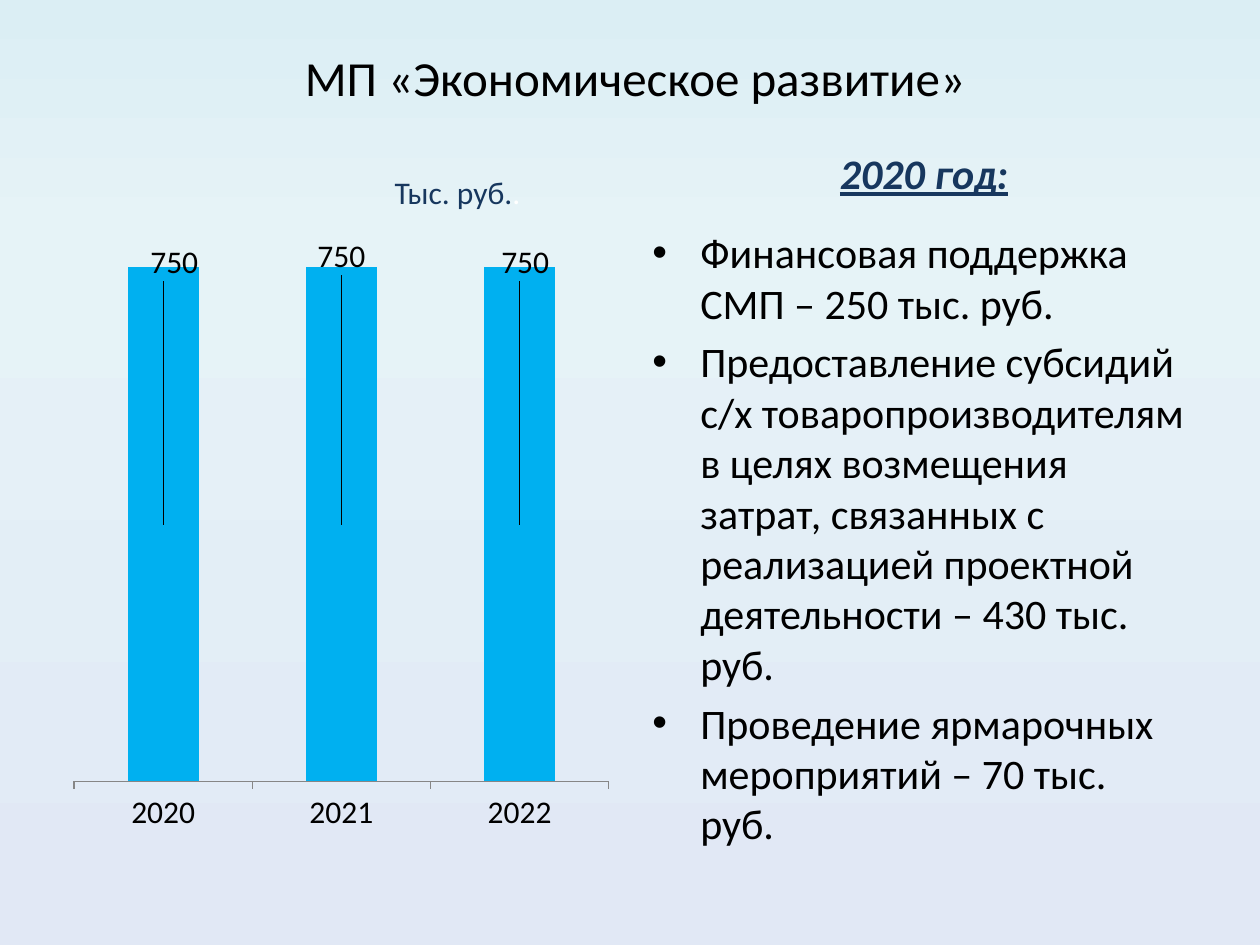
from copy import deepcopy
from lxml.etree import SubElement
from pptx import Presentation
from pptx.chart.data import CategoryChartData
from pptx.dml.color import RGBColor
from pptx.enum.chart import XL_CHART_TYPE, XL_TICK_LABEL_POSITION, XL_TICK_MARK
from pptx.enum.text import MSO_ANCHOR, MSO_AUTO_SIZE, PP_ALIGN
from pptx.oxml.ns import qn
from pptx.util import Inches, Pt

COLORS = {
    "black": "000000", "navy": "17375E", "white": "FFFFFF", "bar": "00B0F0",
    "axis": "868686", "top": "DBEEF4", "mid": "E6F3F7", "base": "E1E8F5",
}


def color(name):
    return RGBColor.from_string(COLORS[name])


def style(font, size, name):
    font.name = "Calibri"
    font.size = Pt(size)
    font.color.rgb = color(name)


prs = Presentation()
prs.slide_width, prs.slide_height = Inches(10), Inches(7.5)
slide = prs.slides.add_slide(prs.slide_layouts[5])

fill = slide.background.fill
fill.gradient()
fill.gradient_angle = 270
stops = next(slide.element.iter(qn("a:gsLst")))
stops.insert(1, deepcopy(stops[0]))
for stop, (place, name) in zip(fill.gradient_stops, [(0, "top"), (0.25, "mid"), (1, "base")]):
    stop.position = place
    stop.color.rgb = color(name)

title = slide.shapes.title
title.left, title.top = Inches(0.25), Inches(0.3)
title.width, title.height = Inches(9.58), Inches(0.62)
title.text_frame.text = "МП «Экономическое развитие»"
title.text_frame.vertical_anchor = MSO_ANCHOR.MIDDLE
title.text_frame.paragraphs[0].alignment = PP_ALIGN.CENTER
style(title.text_frame.paragraphs[0].runs[0].font, 28, "black")

data = CategoryChartData()
data.categories = ["2020", "2021", "2022"]
data.add_series("Series 1", [750, 750, 750])
chart = slide.shapes.add_chart(
    XL_CHART_TYPE.COLUMN_STACKED, Inches(0.5), Inches(1.75), Inches(4.42), Inches(4.95), data
).chart
chart.has_legend = False
chart.has_title = False
style(chart.font, 18, "black")
plot = chart.plots[0]
plot.gap_width, plot.overlap = 150, 100
plot.vary_by_categories = False
years, sums = chart.category_axis, chart.value_axis
years.major_tick_mark = XL_TICK_MARK.OUTSIDE
years.format.line.color.rgb = color("axis")
sums.minimum_scale, sums.maximum_scale = 0, 800
sums.has_major_gridlines = False
sums.tick_label_position = XL_TICK_LABEL_POSITION.NONE
sums.visible = False
bars = plot.series[0]
bars.format.fill.solid()
bars.format.fill.fore_color.rgb = color("bar")
bars.data_labels.show_value = True
for i in range(3):
    style(bars.points[i].data_label.font, 18, "black")
for label, (x, y) in zip(
    chart.element.iter(qn("c:dLbl")), [(0.02, -0.42), (0, -0.43), (0.01, -0.42)]
):
    layout = label.makeelement(qn("c:layout"))
    label.insert(1, layout)
    manual = SubElement(layout, qn("c:manualLayout"))
    SubElement(manual, qn("c:x"), val=str(x))
    SubElement(manual, qn("c:y"), val=str(y))

body = slide.shapes.add_textbox(Inches(5.08), Inches(1.75), Inches(4.42), Inches(4.95)).text_frame
body.word_wrap = True
body.text = "\n".join([
    "Финансовая поддержка СМП – 250 тыс. руб.",
    "Предоставление субсидий с/х товаропроизводителям в целях возмещения затрат, "
    "связанных с реализацией проектной деятельности – 430 тыс. руб.",
    "Проведение ярмарочных мероприятий – 70 тыс. руб.",
])
for para in body.paragraphs:
    para.space_before = Pt(4.8)
    style(para.runs[0].font, 24, "black")
    props = para._p.get_or_add_pPr()
    props.set("marL", str(Inches(0.38)))
    props.set("indent", str(-Inches(0.38)))
    SubElement(props, qn("a:buFont"), typeface="Arial")
    SubElement(props, qn("a:buChar"), char="•")

notes = [
    ((6.5, 1.08, 1.67, 0.58), 24, True, [("2020 год:", "navy")]),
    ((2.92, 1.38, 1.42, 0.29), 18, False, [("Тыс. руб.", "navy"), (".", "white")]),
]
for place, size, strong, parts in notes:
    frame = slide.shapes.add_textbox(*map(Inches, place)).text_frame
    frame.word_wrap = True
    frame.auto_size = MSO_AUTO_SIZE.NONE
    frame.vertical_anchor = MSO_ANCHOR.MIDDLE
    para = frame.paragraphs[0]
    para.alignment = PP_ALIGN.CENTER
    for text, name in parts:
        run = para.add_run()
        run.text = text
        style(run.font, size, name)
        run.font.bold = run.font.italic = run.font.underline = strong

prs.save("out.pptx")
